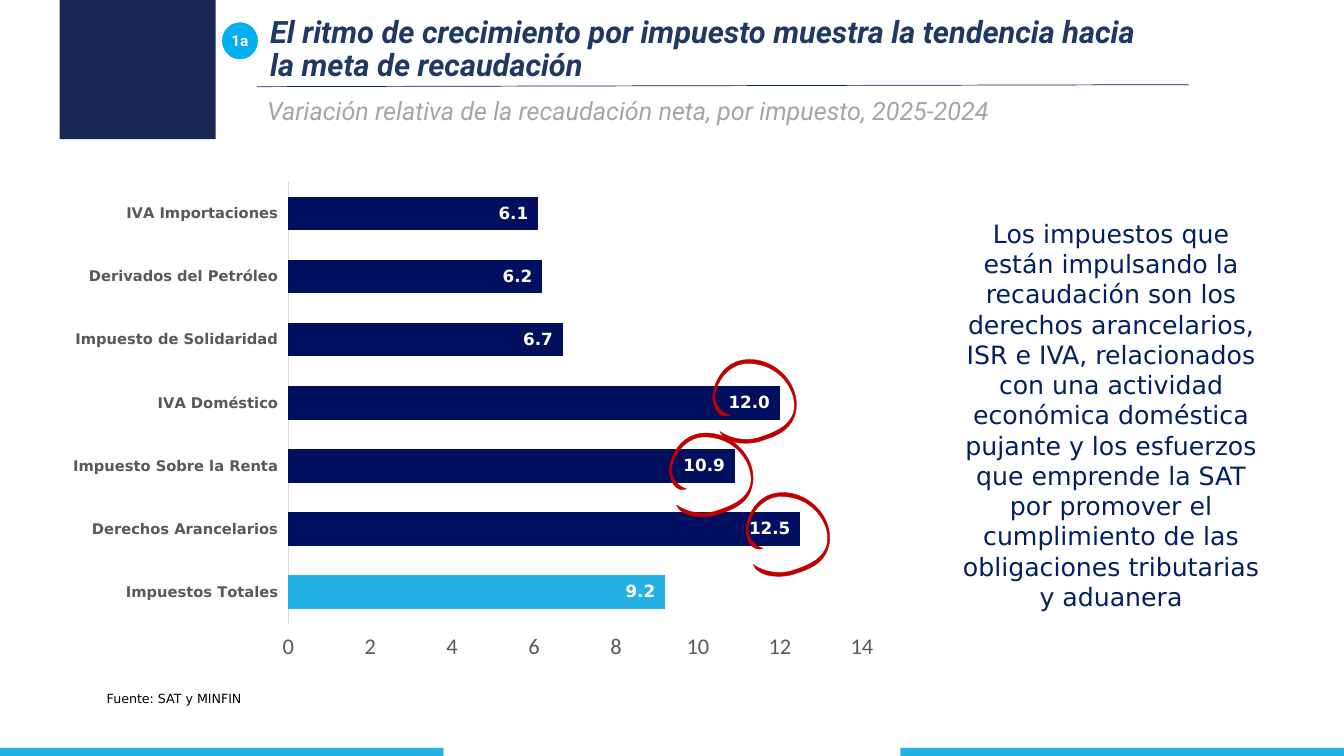
from lxml import etree
from pptx import Presentation, util as u
from pptx.chart.data import CategoryChartData
from pptx.dml.color import RGBColor
from pptx.enum import chart as ch, shapes, text
from pptx.oxml import parse_xml
from pptx.oxml.ns import nsdecls, qn

TITLE = ("El ritmo de crecimiento por impuesto muestra la tendencia hacia "
         "la meta de recaudación")
SUBTITLE = "Variación relativa de la recaudación neta, por impuesto, 2025-2024"
SOURCE = "Fuente: SAT y MINFIN"
MESSAGE = ("Los impuestos que están impulsando la recaudación son los derechos "
           "arancelarios, ISR e IVA, relacionados con una actividad económica "
           "doméstica pujante y los esfuerzos que emprende la SAT por promover el "
           "cumplimiento de las obligaciones tributarias y aduanera")
TAXES = {
    "IVA Importaciones": 6.1,
    "Derivados del Petróleo": 6.2,
    "Impuesto de Solidaridad": 6.7,
    "IVA Doméstico": 12.0,
    "Impuesto Sobre la Renta": 10.9,
    "Derechos Arancelarios": 12.5,
    "Impuestos Totales": 9.2,
}
PLOT_LAYOUT = {"x": 0.278, "y": 0.021, "w": 0.688, "h": 0.884}

# Hand-drawn ring: start point, then cubic curves (two controls and an end), in inches
RING_START = (0.07, 0.75)
RING_CURVES = [
    ((0.20, 0.84), (0.37, 0.85), (0.49, 0.80)),
    ((0.67, 0.74), (0.81, 0.66), (0.81, 0.49)),
    ((0.81, 0.32), (0.66, 0.11), (0.42, 0.08)),
    ((0.14, 0.03), (0.02, 0.31), (0.02, 0.40)),
    ((0.02, 0.49), (0.09, 0.57), (0.17, 0.59)),
    ((0.06, 0.63), (0.00, 0.51), (0.00, 0.40)),
    ((0.00, 0.30), (0.10, 0.00), (0.42, 0.04)),
    ((0.61, 0.06), (0.83, 0.24), (0.83, 0.49)),
    ((0.82, 0.74), (0.61, 0.80), (0.49, 0.84)),
    ((0.36, 0.89), (0.12, 0.88), (0.07, 0.75)),
]
RING_PLACES = [(7.07, 3.53), (6.64, 4.26), (7.40, 4.85)]

WHITE = RGBColor(0xFF, 0xFF, 0xFF)
BLACK = RGBColor(0x00, 0x00, 0x00)
SKY = RGBColor(0x23, 0xB2, 0xE3)
BADGE_BLUE = RGBColor(0x00, 0xB0, 0xF0)
BLOCK_NAVY = RGBColor(0x19, 0x28, 0x54)
TITLE_NAVY = RGBColor(0x20, 0x38, 0x64)
TEXT_NAVY = RGBColor(0x00, 0x20, 0x60)
BAR_NAVY = RGBColor(0x00, 0x10, 0x5E)
GREY = RGBColor(0xA5, 0xA5, 0xA5)
AXIS_TEXT = RGBColor(0x59, 0x59, 0x59)
AXIS_LINE = RGBColor(0xD9, 0xD9, 0xD9)
RED = RGBColor(0xC0, 0x00, 0x00)
FOOTER_BANDS = [(0, 4.4, SKY), (4.4, 4.53, WHITE), (8.93, 4.4, SKY)]


def set_font(font, size, name, color, bold=False, italic=False):
    font.size, font.name = u.Pt(size), name
    font.bold, font.italic = bold, italic
    font.color.rgb = color


def write(shape, words, *, size, font, color, bold=False, italic=False,
          align=text.PP_ALIGN.LEFT, anchor=text.MSO_ANCHOR.TOP,
          insets=(0.1, 0.05, 0.1, 0.05), spacing=None, indent=None):
    frame = shape.text_frame
    frame.word_wrap = True
    frame.auto_size = text.MSO_AUTO_SIZE.NONE
    frame.vertical_anchor = anchor
    (frame.margin_left, frame.margin_top,
     frame.margin_right, frame.margin_bottom) = map(u.Inches, insets)
    para = frame.paragraphs[0]
    para.alignment = align
    if spacing:
        para.line_spacing = spacing
    if indent:
        para._p.get_or_add_pPr().set("marL", str(u.Inches(indent)))
    span = para.add_run()
    span.text = words
    set_font(span.font, size, font, color, bold, italic)


def add_block(slide, preset, place, fill, line=None):
    block = slide.shapes.add_shape(preset, *map(u.Inches, place))
    paint(block, fill, line, 1.5)
    return block


def paint(shape, fill, line, width):
    shape.shadow.inherit = False
    shape.fill.solid()
    shape.fill.fore_color.rgb = fill
    if line is None:
        shape.line.fill.background()
    else:
        shape.line.color.rgb = line
        shape.line.width = u.Pt(width)


def add_text_box(slide, place, words, **style):
    write(slide.shapes.add_textbox(*map(u.Inches, place)), words, **style)


def add_ring(slide, left, top):
    """Lay out all curve points as segments, then join each three into a cubic curve."""
    def place(point):
        return u.Inches(left + point[0]), u.Inches(top + point[1])

    builder = slide.shapes.build_freeform(*place(RING_START))
    builder.add_line_segments(
        [place(point) for curve in RING_CURVES for point in curve])
    ring = builder.convert_to_shape()
    outline = ring._element.find(".//" + qn("a:path"))
    segments = outline.findall(qn("a:lnTo"))
    for first in range(0, 3 * len(RING_CURVES), 3):
        curve = etree.Element(qn("a:cubicBezTo"))
        segments[first].addprevious(curve)
        for segment in segments[first:first + 3]:
            curve.append(segment[0])
            outline.remove(segment)
    paint(ring, RED, RED, 0.25)


def add_tax_chart(slide):
    data = CategoryChartData(number_format="0.0")
    data.categories = list(TAXES)
    data.add_series("Series 1", list(TAXES.values()))
    chart = slide.shapes.add_chart(
        ch.XL_CHART_TYPE.BAR_CLUSTERED,
        *map(u.Inches, (0.56, 1.7, 8.27, 4.96)), data).chart
    chart.has_legend = chart.has_title = False
    set_font(chart.font, 10, "Calibri", BLACK)

    names, values = chart.category_axis, chart.value_axis
    for axis in (names, values):
        axis.major_tick_mark = axis.minor_tick_mark = ch.XL_TICK_MARK.NONE
        axis.has_major_gridlines = False
    names.reverse_order = True
    names.tick_label_position = ch.XL_TICK_LABEL_POSITION.LOW
    names.format.line.color.rgb = AXIS_LINE
    names.format.line.width = u.Pt(0.75)
    set_font(names.tick_labels.font, 10.5, "DejaVu Sans", AXIS_TEXT, bold=True)
    values.minimum_scale, values.maximum_scale, values.major_unit = 0, 14, 2
    values.tick_label_position = ch.XL_TICK_LABEL_POSITION.HIGH
    values.format.line.fill.background()
    values.tick_labels.number_format = "#,##0"
    values.tick_labels.number_format_is_linked = False
    set_font(values.tick_labels.font, 16, "Calibri", AXIS_TEXT)

    plot = chart.plots[0]
    plot.gap_width = 88
    plot.vary_by_categories = False
    series = plot.series[0]
    total = series.points[len(TAXES) - 1]
    for part, color in ((series, BAR_NAVY), (total, SKY)):
        part.format.fill.solid()
        part.format.fill.fore_color.rgb = color
    labels = series.data_labels
    labels.show_value = True
    labels.position = ch.XL_LABEL_POSITION.INSIDE_END
    labels.number_format = "#,##0.0_-"
    labels.number_format_is_linked = False
    set_font(labels.font, 12, "DejaVu Sans", WHITE, bold=True)

    area = chart._chartSpace.find(".//" + qn("c:plotArea"))
    for old in area.findall(qn("c:layout")):
        area.remove(old)
    layout = parse_xml(f'<c:layout {nsdecls("c")}><c:manualLayout>'
                       '<c:layoutTarget val="inner"/><c:xMode val="edge"/>'
                       '<c:yMode val="edge"/></c:manualLayout></c:layout>')
    for side, share in PLOT_LAYOUT.items():
        etree.SubElement(layout[0], qn("c:" + side)).set("val", str(share))
    area.insert(0, layout)


def main():
    deck = Presentation()
    deck.slide_width, deck.slide_height = u.Inches(13.33), u.Inches(7.5)
    page = deck.slides.add_slide(deck.slide_layouts[5])
    rectangle = shapes.MSO_SHAPE.RECTANGLE
    for left, width, color in FOOTER_BANDS:
        add_block(page, rectangle, (left, 7.42, width, 0.08), color)
    add_block(page, rectangle, (0.59, 0, 1.55, 1.38), BLOCK_NAVY)

    title = page.shapes.title
    title.left, title.top, title.width, title.height = map(
        u.Inches, (2.58, 0.13, 9.07, 0.75))
    write(title, TITLE, size=22, font="Roboto", color=TITLE_NAVY, bold=True,
          italic=True, anchor=text.MSO_ANCHOR.BOTTOM, spacing=0.9)
    add_text_box(page, (2.55, 0.9, 7.82, 0.4), SUBTITLE, size=18,
                 font="Roboto", color=GREY, italic=True)
    add_text_box(page, (0.96, 6.8, 4.28, 0.25), SOURCE, size=9,
                 font="DejaVu Sans", color=BLACK)
    badge = add_block(page, shapes.MSO_SHAPE.OVAL, (2.19, 0.21, 0.38, 0.39),
                      BADGE_BLUE, WHITE)
    write(badge, "1a", size=11, font="Roboto", color=WHITE, bold=True,
          align=text.PP_ALIGN.CENTER, anchor=text.MSO_ANCHOR.MIDDLE,
          insets=(0, 0, 0, 0))
    rule = page.shapes.add_connector(
        shapes.MSO_CONNECTOR.STRAIGHT, *map(u.Inches, (2.55, 0.86, 11.79, 0.84)))
    rule.line.color.rgb = TEXT_NAVY
    rule.line.width = u.Pt(0.5)
    etree.SubElement(rule._element.spPr, qn("a:effectLst"))

    add_text_box(page, (9.41, 2.53, 3.22, 3.17), MESSAGE, size=18,
                 font="DejaVu Sans", color=TEXT_NAVY, indent=0.08,
                 align=text.PP_ALIGN.CENTER, anchor=text.MSO_ANCHOR.MIDDLE,
                 insets=(0.04, 0.04, 0.12, 0.04))
    add_tax_chart(page)
    for left, top in RING_PLACES:
        add_ring(page, left, top)
    deck.save("out.pptx")


if __name__ == "__main__":
    main()
